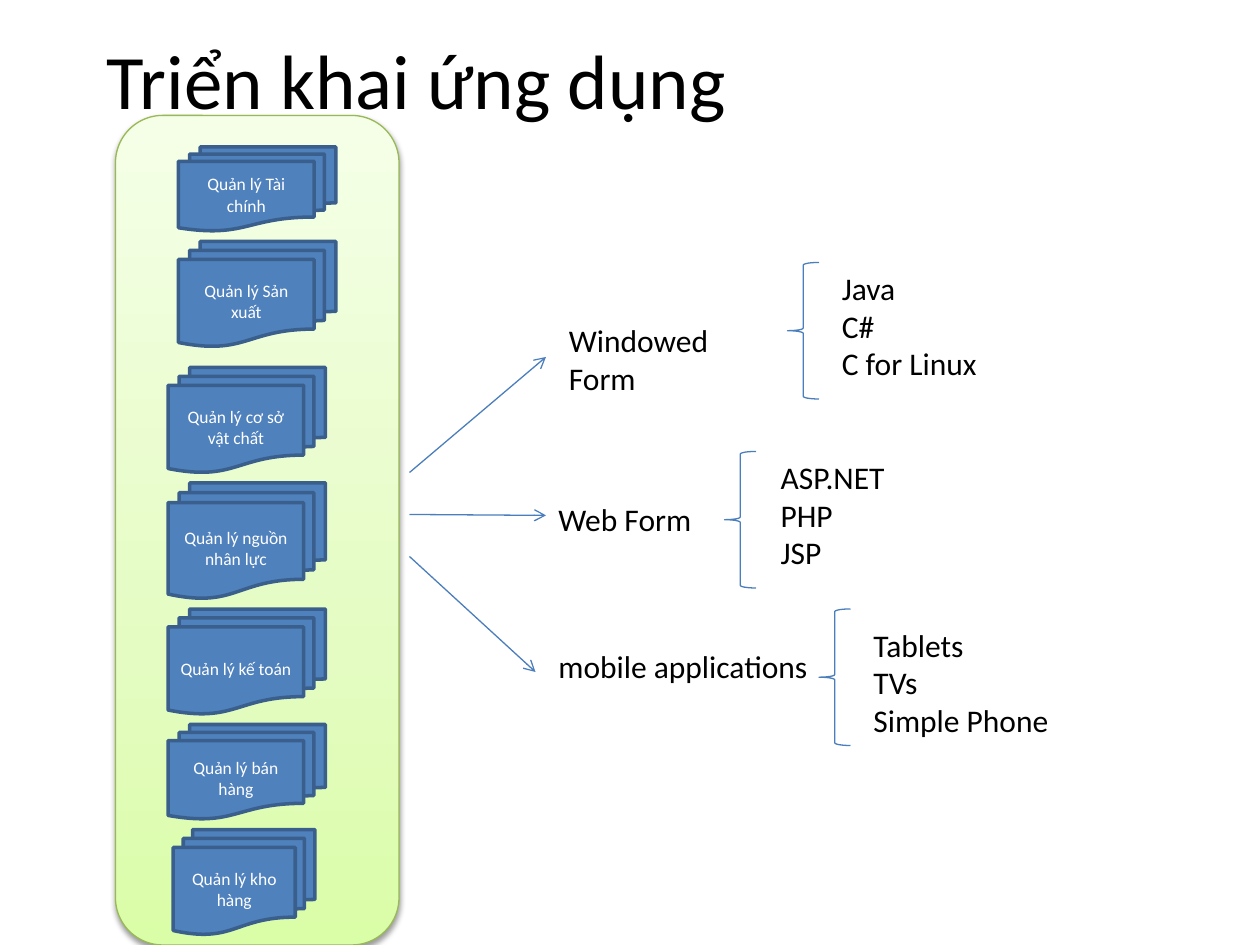
from dataclasses import dataclass

from lxml.etree import SubElement
from pptx import Presentation
from pptx.dml.color import RGBColor
from pptx.enum.shapes import MSO_CONNECTOR, MSO_SHAPE
from pptx.enum.text import MSO_ANCHOR, MSO_AUTO_SIZE, PP_ALIGN
from pptx.oxml import parse_xml
from pptx.oxml.ns import nsdecls, qn
from pptx.util import Pt


@dataclass(frozen=True)
class Theme:
    font: str = "Calibri"
    title: int = 44
    body: int = 18
    small: int = 10
    text: str = "000000"
    light: str = "FFFFFF"
    accent: str = "4B7EBC"
    doc_fill: str = "4F81BD"
    doc_line: str = "3A5F8C"
    panel_line: str = "98B955"
    panel_stops: tuple = ((0, "DAFDA7"), (35, "E4FCC2"), (100, "F5FFE7"))


T = Theme()


def write(sp, text, size=T.body, color=T.text, align=PP_ALIGN.LEFT,
          anchor=MSO_ANCHOR.TOP, fit=MSO_AUTO_SIZE.NONE):
    tf = sp.text_frame
    tf.word_wrap = True
    tf.auto_size = fit
    tf.vertical_anchor = anchor
    for i, line in enumerate(text.split("\n")):
        p = tf.paragraphs[0] if i == 0 else tf.add_paragraph()
        p.alignment = align
        r = p.add_run()
        r.text = line
        r.font.name = T.font
        r.font.size = Pt(size)
        r.font.color.rgb = RGBColor.from_string(color)


def outline(sp, color, width):
    sp.line.color.rgb = RGBColor.from_string(color)
    sp.line.width = Pt(width)


prs = Presentation()
prs.slide_width, prs.slide_height = Pt(720), Pt(540)
s = prs.slides.add_slide(prs.slide_layouts[6])

# Title
sp = s.shapes.add_textbox(Pt(54), Pt(0), Pt(636), Pt(90))
write(sp, "Triển khai ứng dụng", size=T.title, anchor=MSO_ANCHOR.MIDDLE)

# Platforms: arrow (from, to), label box, brace position, technologies box
platforms = [
    ((234, 270, 312, 204), "Windowed Form", (318, 180, 126, 30),
     (450, 150), "Java\nC#\nC for Linux", (474, 150, 138, 72.72)),
    ((234, 294, 312, 294.5), "Web Form", (312, 282, 102, 30),
     (414, 258), "ASP.NET\nPHP\nJSP", (439, 258, 88.5, 72.72)),
    ((234, 318, 306, 384), "mobile applications", (312, 366, 168, 29),
     (468, 348), "Tablets\nTVs\nSimple Phone", (492, 354, 132, 72.72)),
]
for arrow, label, label_box, brace, techs, tech_box in platforms:
    cn = s.shapes.add_connector(MSO_CONNECTOR.STRAIGHT, *map(Pt, arrow))
    outline(cn, T.accent, 0.75)
    SubElement(cn.line._get_or_add_ln(), qn("a:tailEnd"), type="arrow")
    SubElement(cn._element.spPr, qn("a:effectLst"))

    sp = s.shapes.add_shape(MSO_SHAPE.LEFT_BRACE, *map(Pt, brace), Pt(18), Pt(78))
    sp.shadow.inherit = False
    sp.fill.background()
    outline(sp, T.accent, 0.75)

    for text, box in ((label, label_box), (techs, tech_box)):
        sp = s.shapes.add_textbox(*map(Pt, box))
        write(sp, text, fit=MSO_AUTO_SIZE.SHAPE_TO_FIT_TEXT)

# Panel with a three-stop gradient rising from the bottom, and a soft shadow
panel = s.shapes.add_shape(MSO_SHAPE.ROUNDED_RECTANGLE, Pt(66), Pt(66), Pt(162), Pt(474))
outline(panel, T.panel_line, 0.75)
stops = "".join(f'<a:gs pos="{pos * 1000}"><a:srgbClr val="{c}"/></a:gs>'
                for pos, c in T.panel_stops)
panel.line._get_or_add_ln().addprevious(parse_xml(
    f'<a:gradFill {nsdecls("a")} rotWithShape="1"><a:gsLst>{stops}</a:gsLst>'
    '<a:lin ang="16200000" scaled="1"/></a:gradFill>'))
panel._element.spPr.append(parse_xml(
    f'<a:effectLst {nsdecls("a")}>'
    f'<a:outerShdw blurRad="{Pt(3.1)}" dist="{Pt(1.6)}" dir="5400000" rotWithShape="0">'
    f'<a:srgbClr val="{T.text}"><a:alpha val="38000"/></a:srgbClr>'
    '</a:outerShdw></a:effectLst>'))

# Management modules, top to bottom: left, top, width, height
modules = [
    ("Quản lý Tài chính", 102, 84, 90, 48),
    ("Quản lý Sản xuất", 102, 138, 90, 60),
    ("Quản lý cơ sở vật chất", 96, 210, 90, 60),
    ("Quản lý nguồn nhân lực", 96, 276, 90, 66),
    ("Quản lý kế toán", 96, 348, 90, 60),
    ("Quản lý bán hàng", 96, 414, 90, 54),
    ("Quản lý kho hàng", 99, 474, 81, 60),
]
group = s.shapes.add_group_shape()
for text, *box in modules:
    sp = group.shapes.add_shape(MSO_SHAPE.FLOWCHART_MULTIDOCUMENT, *map(Pt, box))
    sp.shadow.inherit = False
    sp.fill.solid()
    sp.fill.fore_color.rgb = RGBColor.from_string(T.doc_fill)
    outline(sp, T.doc_line, 2)
    write(sp, text, size=T.small, color=T.light, align=PP_ALIGN.CENTER,
          anchor=MSO_ANCHOR.MIDDLE)

prs.save("out.pptx")
